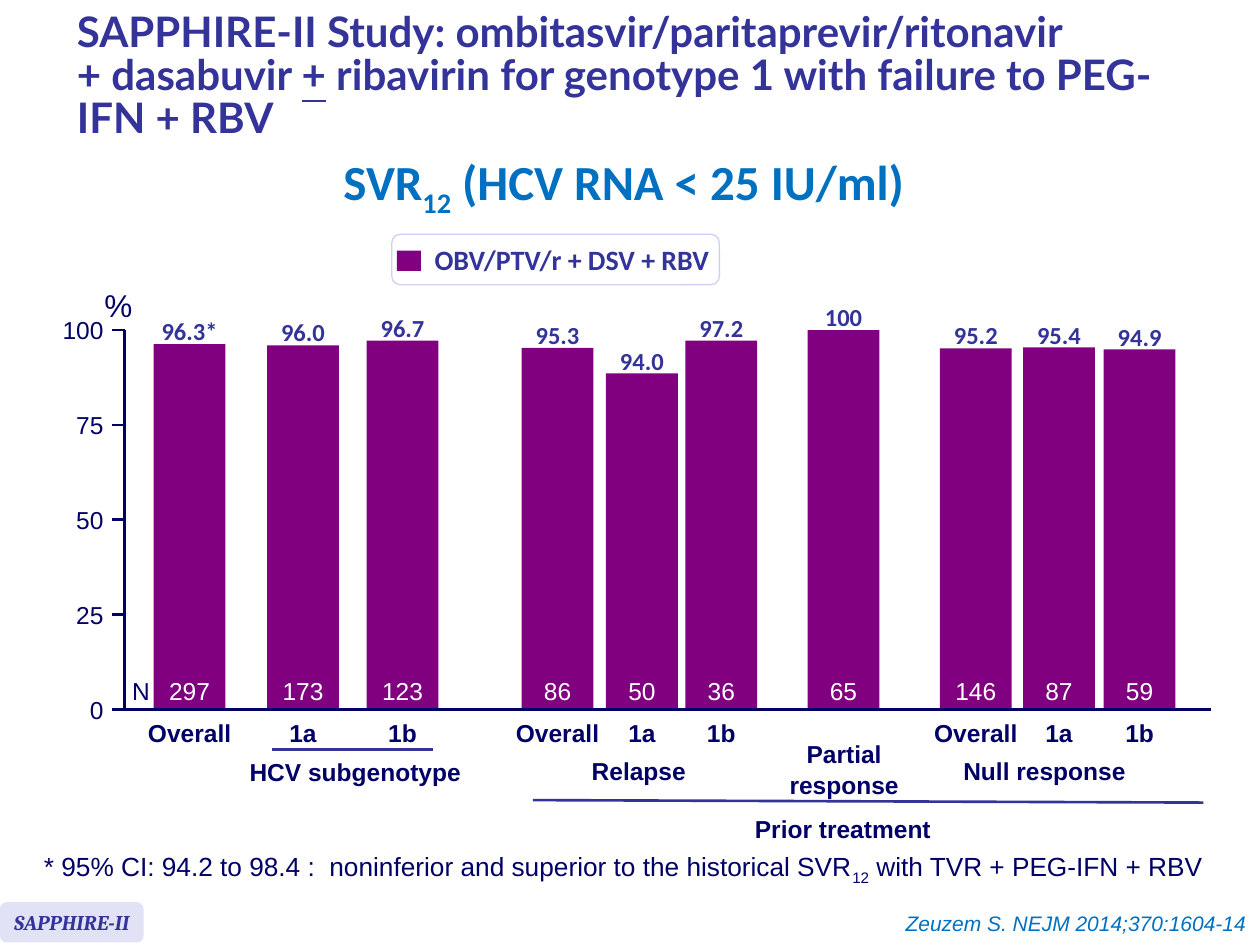
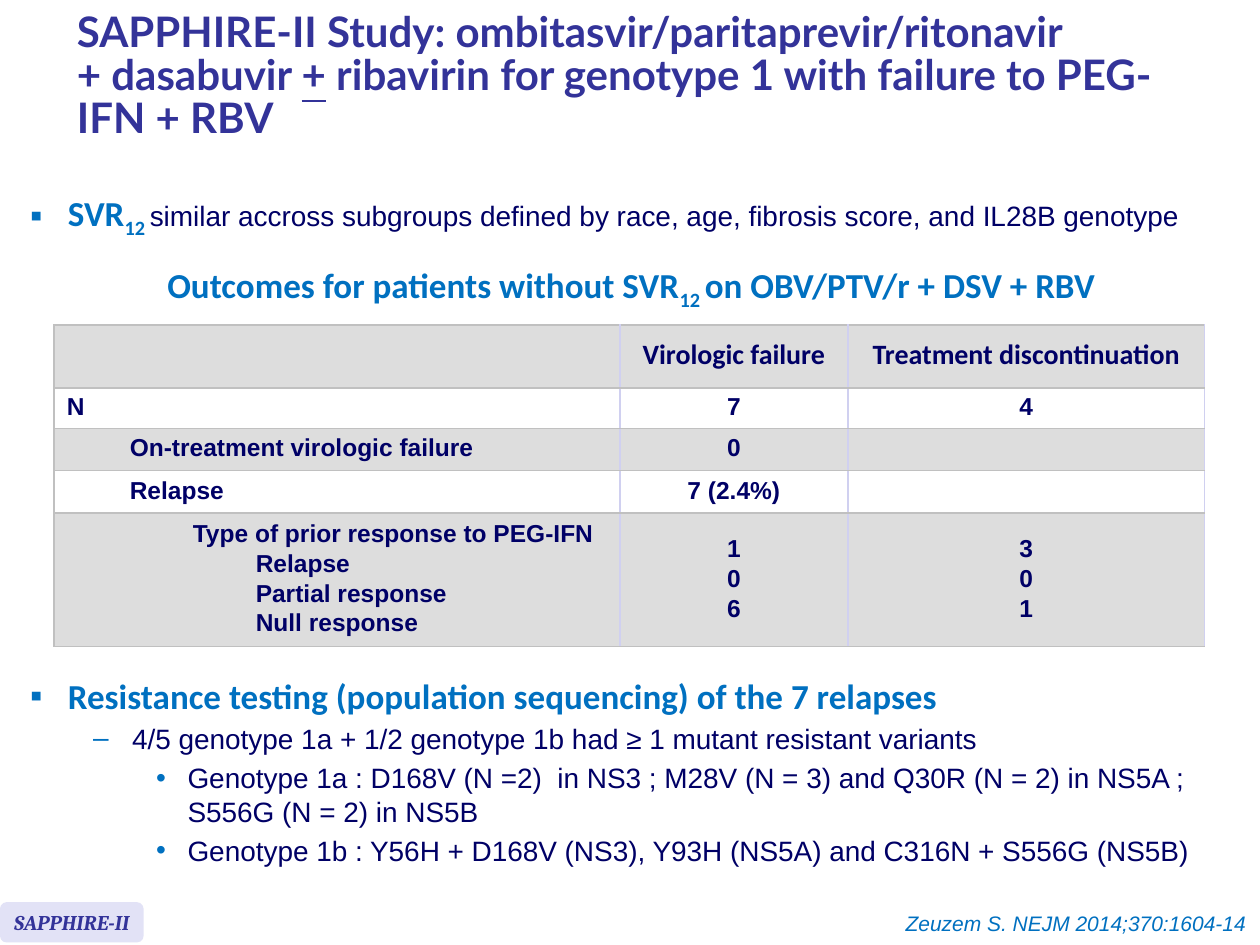
from collections import namedtuple

from lxml.etree import SubElement
from pptx import Presentation
from pptx.dml.color import RGBColor
from pptx.enum.shapes import MSO_CONNECTOR as Connector, MSO_SHAPE as Preset
from pptx.enum.text import MSO_ANCHOR as Anchor, MSO_AUTO_SIZE as AutoSize, PP_ALIGN as Align
from pptx.oxml.ns import qn
from pptx.util import Inches, Pt

COLORS = {
    "navy": "000066", "indigo": "333399", "blue": "0070C0", "purple": "800080",
    "lavender": "E2E2F6", "lilac": "D0D0F0", "silver": "C0C0C0", "grey": "DDDDDD",
    "white": "FFFFFF",
}


def style(name, size, color, **extra):
    """Return the font values for one kind of text."""
    return {"name": name, "size": Pt(size), "color": color, **extra}


STYLES = {
    "title": style("Lato", 24, "indigo", bold=True),
    "heading": style("Calibri", 28, "blue", bold=True),
    "subheading": style("Calibri", 20, "blue", bold=True),
    "body": style("Arial", 16, "navy", bold=False),
    "axis": style("Arial", 14, "navy"),
    "unit": style("Arial", 18, "navy"),
    "category": style("Arial", 14, "navy", bold=True),
    "value": style("Calibri", 14, "indigo", bold=True),
    "count": style("Arial", 14, "white"),
    "legend": style("Calibri", 16, "indigo", bold=True),
    "footnote": style("Arial", 15, "navy"),
    "study": style("Cambria", 12, "indigo", bold=True, italic=True),
    "citation": style("Arial", 12, "blue", italic=True),
    "column": style("Calibri", 16, "navy", bold=True),
}

Box = namedtuple("Box", "left top width height")
Bar = namedtuple("Bar", "left height value count category")
Sub = namedtuple("Sub", "text")
Under = namedtuple("Under", "text")

TITLE = ["SAPPHIRE-II Study: ombitasvir/paritaprevir/ritonavir ", "\n", "+ dasabuvir ", Under("+"),
         " ribavirin for genotype 1 with failure to PEG-IFN + RBV"]
BARS = [
    Bar(0.23, 96.3, "96.3*", 297, "Overall"),
    Bar(1.13, 96.0, "96.0", 173, "1a"),
    Bar(1.92, 97.2, "96.7", 123, "1b"),
    Bar(3.15, 95.3, "95.3", 86, "Overall"),
    Bar(3.82, 88.6, "94.0", 50, "1a"),
    Bar(4.45, 97.2, "97.2", 36, "1b"),
    Bar(5.42, 100, "100", 65, None),
    Bar(6.47, 95.2, "95.2", 146, "Overall"),
    Bar(7.13, 95.4, "95.4", 87, "1a"),
    Bar(7.77, 94.9, "94.9", 59, "1b"),
]
BAR_WIDTH = 0.57
GROUPS = [
    (1.83, 0.33, ["HCV subgenotype"]),
    (4.08, 0.32, ["Relapse"]),
    (5.71, 0.19, ["Partial", "response"]),
    (7.3, 0.32, ["Null response"]),
    (5.7, 0.78, ["Prior treatment"]),
]
BRACKETS = [(1.17, 0.32, 2.45, 0.32), (3.24, 0.72, 8.56, 0.74)]
BULLETS = {0: ("▪", 0.3, 0.3), 1: ("–", 0.81, 0.31), 2: ("•", 1.25, 0.25)}
COLUMN_WIDTHS = [4.49, 1.81, 2.83]
ROW_HEIGHTS = [0.5, 0.32, 0.33, 0.34, 1.05]
OUTCOMES = [
    [[], ["Virologic failure"], ["Treatment discontinuation"]],
    [[(0, "N")], ["7"], ["4"]],
    [[(1, "On-treatment virologic failure")], ["0"], []],
    [[(1, "Relapse")], ["7 (2.4%)"], []],
    [[(2, "Type of prior response to PEG-IFN"), (3, "Relapse"), (3, "Partial response"),
      (3, "Null response")], ["1", "0", "6"], ["3", "0", "1"]],
]


def rgb(color):
    """Return the named colour."""
    return RGBColor.from_string(COLORS[color])


def inches(box):
    """Return a box as lengths."""
    return [Inches(value) for value in box]


def write(paragraph, parts, look):
    """Write strings, subscripts and underlined parts in one style."""
    for part in [parts] if isinstance(parts, str) else parts:
        if part == "\n":
            paragraph.add_line_break()
            continue
        run = paragraph.add_run()
        run.text = part if isinstance(part, str) else part.text
        for key, value in STYLES[look].items():
            if key == "color":
                run.font.color.rgb = rgb(value)
            else:
                setattr(run.font, key, value)
        if isinstance(part, Sub):
            run._r.get_or_add_rPr().set("baseline", "-25000")
        if isinstance(part, Under):
            run.font.underline = True


def next_paragraph(frame, index, **layout):
    """Return the paragraph at the index, laid out with the given values."""
    paragraph = frame.add_paragraph() if index else frame.paragraphs[0]
    for key, value in layout.items():
        if index or key != "space_before":
            setattr(paragraph, key, value)
    return paragraph


def add_text(slide, box, lines, look, wrap=False, anchor=Anchor.TOP, **layout):
    """Add a text box with one paragraph for each line."""
    frame = slide.shapes.add_textbox(*inches(box)).text_frame
    frame.word_wrap, frame.vertical_anchor = wrap, anchor
    for index, parts in enumerate(lines):
        write(next_paragraph(frame, index, **{"alignment": Align.CENTER, **layout}), parts, look)


def add_panel(slide, preset, box, fill, line=None):
    """Add a flat filled shape."""
    panel = slide.shapes.add_shape(preset, *inches(box))
    panel.shadow.inherit = False
    panel.fill.solid()
    panel.fill.fore_color.rgb = rgb(fill)
    if line:
        panel.line.color.rgb, panel.line.width = rgb(line), Pt(0.75)
    else:
        panel.line.fill.background()
    return panel


def label_panel(panel, text, look, align, left, right):
    """Write one line inside a panel."""
    frame = panel.text_frame
    frame.word_wrap, frame.vertical_anchor = True, Anchor.MIDDLE
    frame.margin_left, frame.margin_right = Inches(left), Inches(right)
    write(next_paragraph(frame, 0, alignment=align), text, look)


def add_line(slide, ends, color):
    """Add a thin straight line."""
    line = slide.shapes.add_connector(Connector.STRAIGHT, *inches(ends))
    line.line.color.rgb, line.line.width = rgb(color), Pt(1.5)
    SubElement(line._element.spPr, qn("a:effectLst"))


def add_frame(deck):
    """Add a slide with the shared title, study tag and citation."""
    slide = deck.slides.add_slide(deck.slide_layouts[5])
    title = slide.shapes.title
    title.left, title.top, title.width, title.height = inches(Box(0.51, 0.08, 9.13, 1.07))
    frame = title.text_frame
    frame.auto_size, frame.word_wrap, frame.vertical_anchor = AutoSize.NONE, True, Anchor.MIDDLE
    write(next_paragraph(frame, 0, alignment=Align.LEFT, line_spacing=0.85), TITLE, "title")
    tag = add_panel(slide, Preset.ROUNDED_RECTANGLE, Box(0, 7.16, 1.14, 0.32), "lavender")
    label_panel(tag, "SAPPHIRE-II", "study", Align.CENTER, 0.05, 0.05)
    add_text(slide, Box(6.77, 7.18, 3.22, 0.3), ["Zeuzem S. NEJM 2014;370:1604-14"], "citation",
             wrap=True, alignment=Align.RIGHT)
    return slide


def draw_legend(slide, box):
    """Draw the treatment key."""
    key = add_panel(slide, Preset.ROUNDED_RECTANGLE, box, "white", "lilac")
    label_panel(key, "OBV/PTV/r + DSV + RBV", "legend", Align.LEFT, 0.32, 0)
    add_panel(slide, Preset.RECTANGLE, Box(box.left + 0.04, box.top + 0.13, 0.19, 0.16), "purple")


def draw_axes(slide, plot):
    """Draw the percentage scale and the base line."""
    base = plot.top + plot.height
    for percent in range(0, 101, 25):
        y = base - plot.height * percent / 100
        end = plot.left + (0 if percent else plot.width)
        add_line(slide, (plot.left - 0.1, y, end, y), "navy")
        add_text(slide, Box(plot.left - 0.77, y - 0.17, 0.7, 0.34), [str(percent)], "axis",
                 wrap=True, anchor=Anchor.MIDDLE, alignment=Align.RIGHT)
    add_line(slide, (plot.left, plot.top, plot.left, base), "navy")
    add_text(slide, Box(plot.left - 0.26, plot.top - 0.4, 0.42, 0.4), ["%"], "unit")
    add_text(slide, Box(plot.left - 0.04, base - 0.31, 0.34, 0.34), ["N"], "axis")


def draw_bars(slide, plot):
    """Draw the bars with their values, counts and categories."""
    base = plot.top + plot.height
    for bar in BARS:
        left, height = plot.left + bar.left, plot.height * bar.height / 100
        top = base - height
        add_panel(slide, Preset.RECTANGLE, Box(left, top, BAR_WIDTH, height), "purple")
        labels = [(top - 0.27, bar.value, "value"), (base - 0.31, str(bar.count), "count"),
                  (base + 0.02, bar.category, "category")]
        for y, text, look in labels:
            if text:
                add_text(slide, Box(left - 0.15, y, BAR_WIDTH + 0.3, 0.34), [text], look)


def draw_groups(slide, plot):
    """Draw the patient groups below the base line."""
    base = plot.top + plot.height
    for center, drop, lines in GROUPS:
        add_text(slide, Box(plot.left + center - 0.95, base + drop, 1.9, 0.32 * len(lines)), lines,
                 "category", space_before=Pt(0.7))
    for x1, y1, x2, y2 in BRACKETS:
        add_line(slide, (plot.left + x1, base + y1, plot.left + x2, base + y2), "indigo")


def draw_bullets(slide, box, items):
    """Draw bulleted text from levels and styled parts."""
    frame = slide.shapes.add_textbox(*inches(box)).text_frame
    frame.word_wrap = True
    for index, (level, parts) in enumerate(items):
        paragraph = next_paragraph(frame, index, level=level, space_before=Pt(3.2))
        mark, margin, hanging = BULLETS[level]
        props = paragraph._p.get_or_add_pPr()
        props.set("marL", str(Inches(margin)))
        props.set("indent", str(-Inches(hanging)))
        SubElement(SubElement(props, qn("a:buClr")), qn("a:srgbClr"), val=COLORS["blue"])
        SubElement(props, qn("a:buFont"), typeface="Arial")
        SubElement(props, qn("a:buChar"), char=mark)
        for text, look in parts:
            write(paragraph, text, look)


def format_cell(cell, fill, left_edge):
    """Give a cell its borders and fill."""
    props = cell._tc.get_or_add_tcPr()
    sides = {"L": "silver" if left_edge else "lilac", "R": "lilac", "T": "silver", "B": "silver"}
    for side, color in sides.items():
        border = SubElement(props, qn(f"a:ln{side}"), w=str(Pt(1)))
        SubElement(SubElement(border, qn("a:solidFill")), qn("a:srgbClr"), val=COLORS[color])
    cell.fill.solid()
    cell.fill.fore_color.rgb = rgb(fill)
    cell.vertical_anchor = Anchor.MIDDLE


def draw_outcomes(slide, box):
    """Draw the table of patients without a response."""
    table = slide.shapes.add_table(len(OUTCOMES), len(COLUMN_WIDTHS), *inches(box)).table
    table.first_row = table.horz_banding = False
    for column, width in zip(table.columns, COLUMN_WIDTHS):
        column.width = Inches(width)
    for r, (row, height) in enumerate(zip(OUTCOMES, ROW_HEIGHTS)):
        table.rows[r].height = Inches(height)
        for c, lines in enumerate(row):
            cell = table.cell(r, c)
            format_cell(cell, "white" if r % 2 else "grey", c == 0)
            if not lines:
                SubElement(cell.text_frame.paragraphs[0]._p, qn("a:endParaRPr"), sz="1400")
            for index, line in enumerate(lines):
                level, text = (0, line) if c else line
                paragraph = next_paragraph(
                    cell.text_frame, index, level=level, line_spacing=0.9 if r else 0.8,
                    space_before=Pt(2.8), alignment=Align.CENTER if c else Align.LEFT)
                paragraph._p.get_or_add_pPr().set("marL", str(Inches(level * 0.5)))
                write(paragraph, text, "category" if r else "column")


def build_response_slide(deck):
    """Build the slide of response rates by subgroup."""
    slide = add_frame(deck)
    add_text(slide, Box(2.5, 1.36, 4.9, 0.46), [["SVR", Sub("12"), " (HCV RNA < 25 IU/ml)"]],
             "heading", line_spacing=Pt(23.6))
    draw_legend(slide, Box(3.11, 1.86, 2.6, 0.4))
    plot = Box(0.99, 2.62, 8.62, 3.01)
    for draw in (draw_bars, draw_axes, draw_groups):
        draw(slide, plot)
    add_text(slide, Box(0.25, 6.7, 9.58, 0.35), [[
        "* 95% CI: 94.2 to 98.4 :  noninferior and superior to the historical SVR", Sub("12"),
        " with TVR + PEG-IFN + RBV"]], "footnote", wrap=True, alignment=Align.LEFT)


def build_failure_slide(deck):
    """Build the slide of outcomes without response and of resistance."""
    slide = add_frame(deck)
    draw_bullets(slide, Box(0.14, 1.47, 9.85, 0.52), [(0, [
        (["SVR", Sub("12 ")], "subheading"),
        ("similar accross subgroups defined by race, age, fibrosis score, and IL28B genotype",
         "body")])])
    add_text(slide, Box(0.09, 2.08, 9.84, 0.38), [[
        "Outcomes for patients without SVR", Sub("12 "), "on OBV/PTV/r + DSV + RBV"]],
        "subheading", wrap=True, line_spacing=0.8)
    draw_outcomes(slide, Box(0.43, 2.58, sum(COLUMN_WIDTHS), sum(ROW_HEIGHTS)))
    draw_bullets(slide, Box(0.14, 5.3, 9.85, 1.68), [
        (0, [("Resistance testing (population sequencing) of the 7 relapses", "subheading")]),
        (1, [("4/5 genotype 1a + 1/2 genotype 1b had ≥ 1 mutant resistant variants", "body")]),
        (2, [("Genotype 1a : D168V (N =2)  in NS3 ; M28V (N = 3) and Q30R (N = 2) in NS5A ; "
              "S556G (N = 2) in NS5B", "body")]),
        (2, [("Genotype 1b : Y56H + D168V (NS3), Y93H (NS5A) and C316N + S556G (NS5B)", "body")]),
    ])


def main():
    """Build and save the two slides."""
    deck = Presentation()
    deck.slide_width, deck.slide_height = Inches(10), Inches(7.5)
    build_response_slide(deck)
    build_failure_slide(deck)
    deck.save("out.pptx")


if __name__ == "__main__":
    main()
